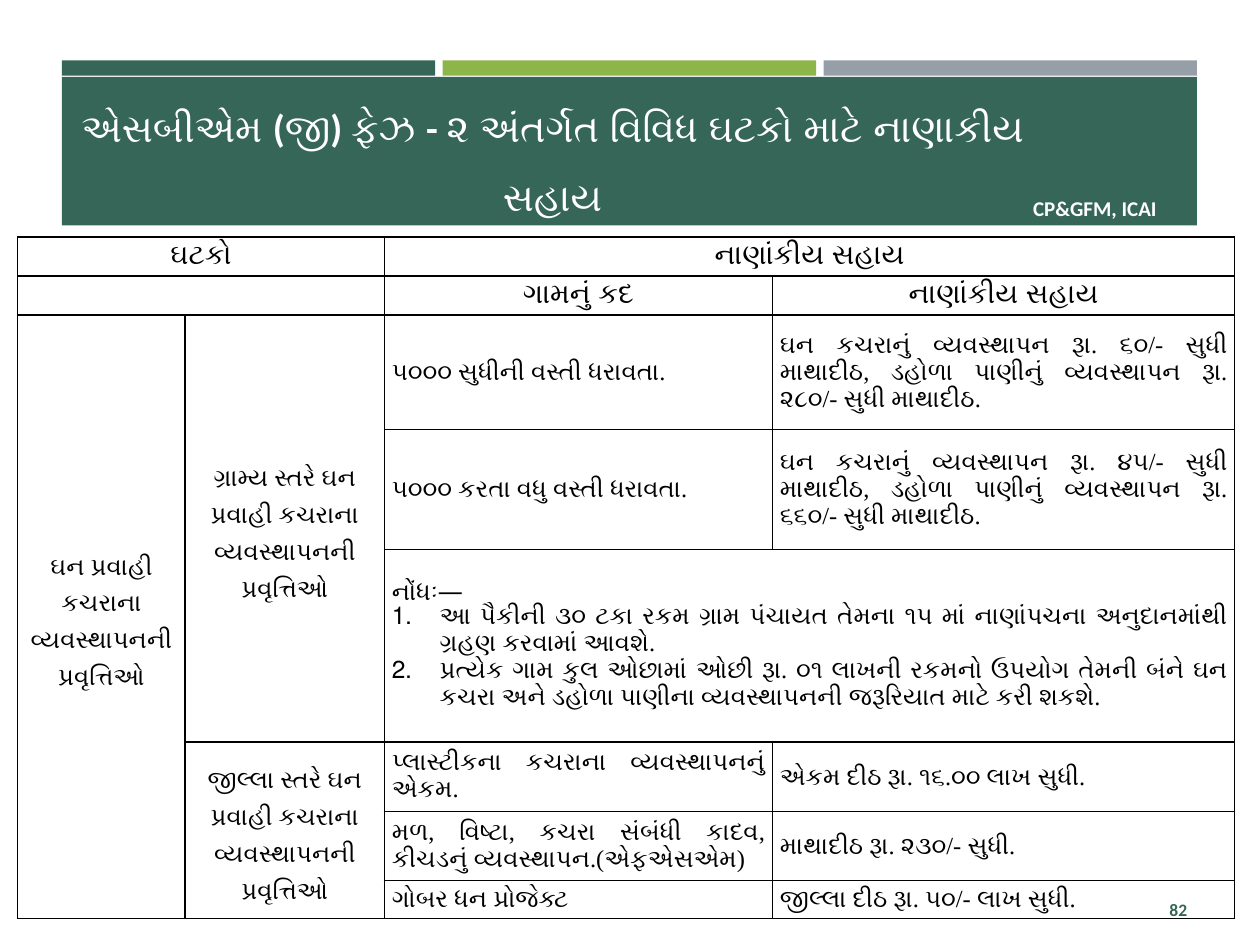
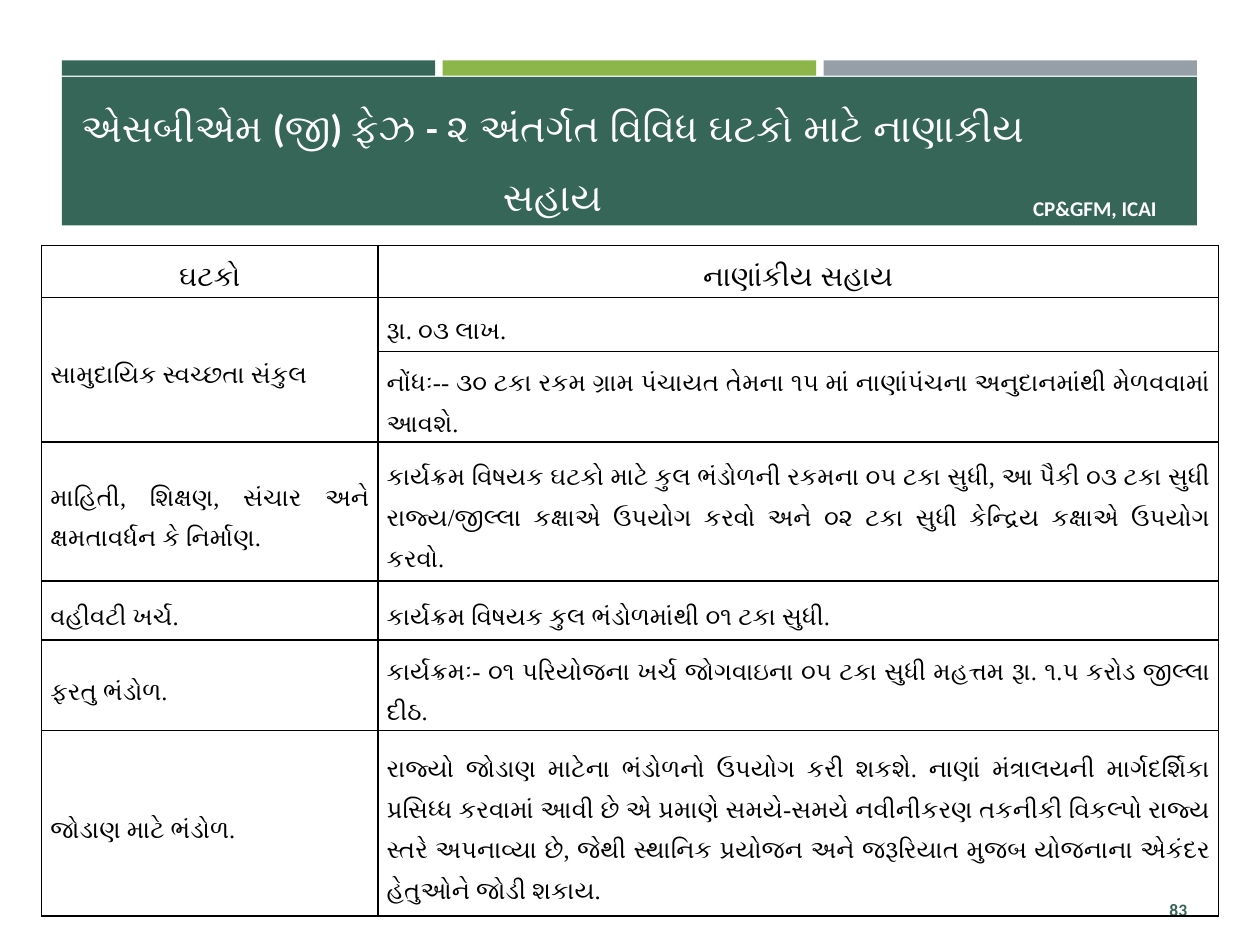
from lxml import etree
from pptx import Presentation
from pptx.dml.color import RGBColor
from pptx.enum.shapes import MSO_SHAPE
from pptx.enum.text import MSO_ANCHOR, MSO_AUTO_SIZE, PP_ALIGN
from pptx.oxml.ns import qn
from pptx.util import Inches, Pt

RECTANGLE = MSO_SHAPE.RECTANGLE
MIDDLE = MSO_ANCHOR.MIDDLE
NO_AUTOFIT = MSO_AUTO_SIZE.NONE
CENTER, RIGHT, JUSTIFY = PP_ALIGN.CENTER, PP_ALIGN.RIGHT, PP_ALIGN.JUSTIFY

GREEN, LIME, GREY = "366658", "8CB64A", "969FA7"
WHITE, BLACK = "FFFFFF", "000000"
HEADING_FONT, TABLE_FONT = "Calibri", "Times New Roman"

TITLE = "એસબીએમ (જી) ફેઝ - ૨ અંતર્ગત વિવિધ ઘટકો માટે નાણાકીય સહાય"
FOOTER = "CP&GFM, ICAI"
BAND_LEFT, BAND_WIDTH, BAND_GAP = 0.49, 9.01, 0.06

COMPONENTS = "ઘટકો"
ASSISTANCE = "નાણાંકીય સહાય"

NOTES = [
    "નોંધઃ—",
    "આ પૈકીની ૩૦ ટકા રકમ ગ્રામ પંચાયત તેમના ૧૫ માં નાણાંપચના અનુદાનમાંથી ગ્રહણ કરવામાં આવશે.",
    "પ્રત્યેક ગામ કુલ ઓછામાં ઓછી રૂા. ૦૧ લાખની રકમનો ઉપયોગ તેમની બંને ઘન કચરા અને ડહોળા "
    "પાણીના વ્યવસ્થાપનની જરૂરિયાત માટે કરી શકશે.",
]

SLIDES = [
    {
        "number": "82",
        "position": (0.14, 1.88),
        "columns": [1.33, 1.58, 3.08, 3.67],
        "rows": [0.31, 0.31, 0.91, 0.95, 1.53, 0.55, 0.55, 0.27],
        "header_rows": 2,
        "group_columns": 2,
        "body_spacing": 1.0,
        "side_margin": 0.06,
        "merges": [(0, 0, 0, 1), (0, 2, 0, 3), (1, 0, 1, 1), (2, 0, 7, 0),
                   (2, 1, 4, 1), (4, 2, 4, 3), (5, 1, 7, 1)],
        "cells": [
            [COMPONENTS, None, ASSISTANCE, None],
            [None, None, "ગામનું કદ", ASSISTANCE],
            ["ઘન પ્રવાહી કચરાના વ્યવસ્થાપનની પ્રવૃત્તિઓ",
             "ગ્રામ્ય સ્તરે ઘન પ્રવાહી કચરાના વ્યવસ્થાપનની પ્રવૃત્તિઓ",
             "૫૦૦૦ સુધીની વસ્તી ધરાવતા.",
             "ઘન કચરાનું વ્યવસ્થાપન રૂા. ૬૦/- સુધી માથાદીઠ, ડહોળા પાણીનું "
             "વ્યવસ્થાપન રૂા. ૨૮૦/- સુધી માથાદીઠ."],
            [None, None, "૫૦૦૦ કરતા વધુ વસ્તી ધરાવતા.",
             "ઘન કચરાનું વ્યવસ્થાપન રૂા. ૪૫/- સુધી માથાદીઠ, ડહોળા પાણીનું "
             "વ્યવસ્થાપન રૂા. ૬૬૦/- સુધી માથાદીઠ."],
            [None, None, NOTES, None],
            [None, "જીલ્લા સ્તરે ઘન પ્રવાહી કચરાના વ્યવસ્થાપનની પ્રવૃત્તિઓ",
             "પ્લાસ્ટીકના કચરાના વ્યવસ્થાપનનું એકમ.", "એકમ દીઠ રૂા. ૧૬.૦૦ લાખ સુધી."],
            [None, None, "મળ, વિષ્ટા, કચરા સંબંધી કાદવ, કીચડનું વ્યવસ્થાપન.(એફએસએમ)",
             "માથાદીઠ રૂા. ૨૩૦/- સુધી."],
            [None, None, "ગોબર ધન પ્રોજેક્ટ", "જીલ્લા દીઠ રૂા. ૫૦/- લાખ સુધી."],
        ],
    },
    {
        "number": "83",
        "position": (0.33, 1.95),
        "columns": [2.67, 6.67],
        "rows": [0.41, 0.43, 0.72, 1.1, 0.47, 0.72, 1.47],
        "header_rows": 1,
        "group_columns": 0,
        "body_spacing": 1.5,
        "side_margin": 0.07,
        "merges": [(1, 0, 2, 0)],
        "cells": [
            [COMPONENTS, ASSISTANCE],
            ["સામુદાયિક સ્વચ્છતા સંકુલ", "રૂા. ૦૩ લાખ."],
            [None, "નોંધઃ-- ૩૦ ટકા રકમ ગ્રામ પંચાયત તેમના ૧૫ માં નાણાંપંચના "
                   "અનુદાનમાંથી મેળવવામાં આવશે."],
            ["માહિતી, શિક્ષણ, સંચાર અને ક્ષમતાવર્ધન કે નિર્માણ.",
             "કાર્યક્રમ વિષયક ઘટકો માટે કુલ ભંડોળની રકમના ૦૫ ટકા સુધી, આ પૈકી ૦૩ ટકા સુધી "
             "રાજ્ય/જીલ્લા કક્ષાએ ઉપયોગ કરવો અને ૦૨ ટકા સુધી કેન્દ્રિય કક્ષાએ ઉપયોગ કરવો."],
            ["વહીવટી ખર્ચ.", "કાર્યક્રમ વિષયક કુલ ભંડોળમાંથી ૦૧ ટકા સુધી."],
            ["ફરતુ ભંડોળ.",
             "કાર્યક્રમઃ- ૦૧ પરિયોજના ખર્ચ જોગવાઇના ૦૫ ટકા સુધી મહત્તમ રૂા. ૧.૫ કરોડ જીલ્લા દીઠ."],
            ["જોડાણ માટે ભંડોળ.",
             "રાજ્યો જોડાણ માટેના ભંડોળનો ઉપયોગ કરી શકશે. નાણાં મંત્રાલયની માર્ગદર્શિકા "
             "પ્રસિધ્ધ કરવામાં આવી છે એ પ્રમાણે સમયે-સમયે નવીનીકરણ તકનીકી વિકલ્પો રાજ્ય "
             "સ્તરે અપનાવ્યા છે, જેથી સ્થાનિક પ્રયોજન અને જરૂરિયાત મુજબ યોજનાના એકંદર "
             "હેતુઓને જોડી શકાય."],
        ],
    },
]


def color(value):
    return RGBColor.from_string(value)


def style_paragraph(paragraph, size, hex_color, font_name, bold=True, align=CENTER, spacing=1.0):
    paragraph.alignment = align
    paragraph.line_spacing = spacing
    font = paragraph.font
    font.size, font.name, font.bold = Pt(size), font_name, bold
    font.color.rgb = color(hex_color)


def add_rectangle(slide, left, top, width, height, hex_color):
    shape = slide.shapes.add_shape(
        RECTANGLE, Inches(left), Inches(top), Inches(width), Inches(height))
    shape.shadow.inherit = False
    shape.fill.solid()
    shape.fill.fore_color.rgb = color(hex_color)
    shape.line.fill.background()
    return shape


def move_bands_to_layout(slide, layout):
    strip_width = (BAND_WIDTH - 2 * BAND_GAP) / 3
    bands = [
        add_rectangle(slide, BAND_LEFT + index * (strip_width + BAND_GAP), 0.48,
                      strip_width, 0.12, strip_color)
        for index, strip_color in enumerate([GREEN, LIME, GREY])
    ]
    bands.append(add_rectangle(slide, BAND_LEFT, 0.61, BAND_WIDTH, 1.18, GREEN))
    footer = add_rectangle(slide, 7.99, 1.56, 1.4, 0.18, GREEN)
    footer.text_frame.text = FOOTER
    footer.text_frame.vertical_anchor = MIDDLE
    style_paragraph(footer.text_frame.paragraphs[0], 12, WHITE, HEADING_FONT)
    bands.append(footer)
    for identifier, shape in enumerate(bands, start=20):
        shape.element.nvSpPr.cNvPr.set("id", str(identifier))
        layout.shapes.element.append(shape.element)


def set_title(slide):
    title = slide.shapes.title
    title.left, title.top = Inches(0.49), Inches(0.62)
    title.width, title.height = Inches(7.79), Inches(1.14)
    frame = title.text_frame
    frame.text = TITLE
    frame.auto_size = NO_AUTOFIT
    frame.vertical_anchor = MIDDLE
    style_paragraph(frame.paragraphs[0], 22, WHITE, HEADING_FONT, spacing=1.5)


def add_slide_number(slide, number):
    box = slide.shapes.add_textbox(Inches(8.68), Inches(7.02), Inches(0.84), Inches(0.4))
    frame = box.text_frame
    frame.text = number
    frame.word_wrap = True
    frame.vertical_anchor = MIDDLE
    style_paragraph(frame.paragraphs[0], 10, GREEN, HEADING_FONT, align=RIGHT)


def set_borders(cell):
    properties = cell._tc.get_or_add_tcPr()
    for side in ("a:lnL", "a:lnR", "a:lnT", "a:lnB"):
        line = etree.SubElement(properties, qn(side), w=str(Pt(1)))
        fill = etree.SubElement(line, qn("a:solidFill"))
        etree.SubElement(fill, qn("a:srgbClr"), val=BLACK)


def number_paragraph(paragraph):
    properties = paragraph._p.get_or_add_pPr()
    properties.set("marL", str(Inches(0.38)))
    properties.set("indent", str(-Inches(0.38)))
    etree.SubElement(properties, qn("a:buFont"), typeface="Arial")
    etree.SubElement(properties, qn("a:buAutoNum"), type="arabicPeriod")


def fill_cell(cell, content, row, column, data):
    cell.margin_left = cell.margin_right = Inches(data["side_margin"])
    cell.margin_top = cell.margin_bottom = 0
    cell.vertical_anchor = MIDDLE
    set_borders(cell)
    cell.fill.background()
    is_header = row < data["header_rows"]
    is_group = not is_header and column < data["group_columns"]
    lines = content if isinstance(content, list) else [content or ""]
    cell.text = "\n".join(lines)
    for index, paragraph in enumerate(cell.text_frame.paragraphs):
        if index:
            number_paragraph(paragraph)
        style_paragraph(
            paragraph, 16 if is_header else 14, BLACK, TABLE_FONT, bold=is_header,
            align=CENTER if is_header or is_group else JUSTIFY,
            spacing=1.5 if is_group else data["body_spacing"])


def add_assistance_table(slide, data):
    columns, rows = data["columns"], data["rows"]
    left, top = data["position"]
    table = slide.shapes.add_table(
        len(rows), len(columns), Inches(left), Inches(top),
        Inches(sum(columns)), Inches(sum(rows))).table
    table.first_row = table.horz_banding = False
    for column, width in zip(table.columns, columns):
        column.width = Inches(width)
    for row, height in zip(table.rows, rows):
        row.height = Inches(height)
    for row, contents in enumerate(data["cells"]):
        for column, content in enumerate(contents):
            fill_cell(table.cell(row, column), content, row, column, data)
    for first_row, first_column, last_row, last_column in data["merges"]:
        table.cell(first_row, first_column).merge(table.cell(last_row, last_column))


def main():
    presentation = Presentation()
    presentation.slide_width, presentation.slide_height = Inches(10), Inches(7.5)
    layout = presentation.slide_layouts[5]
    for index, data in enumerate(SLIDES):
        slide = presentation.slides.add_slide(layout)
        if index == 0:
            move_bands_to_layout(slide, layout)
        set_title(slide)
        add_slide_number(slide, data["number"])
        add_assistance_table(slide, data)
    presentation.save("out.pptx")


if __name__ == "__main__":
    main()
